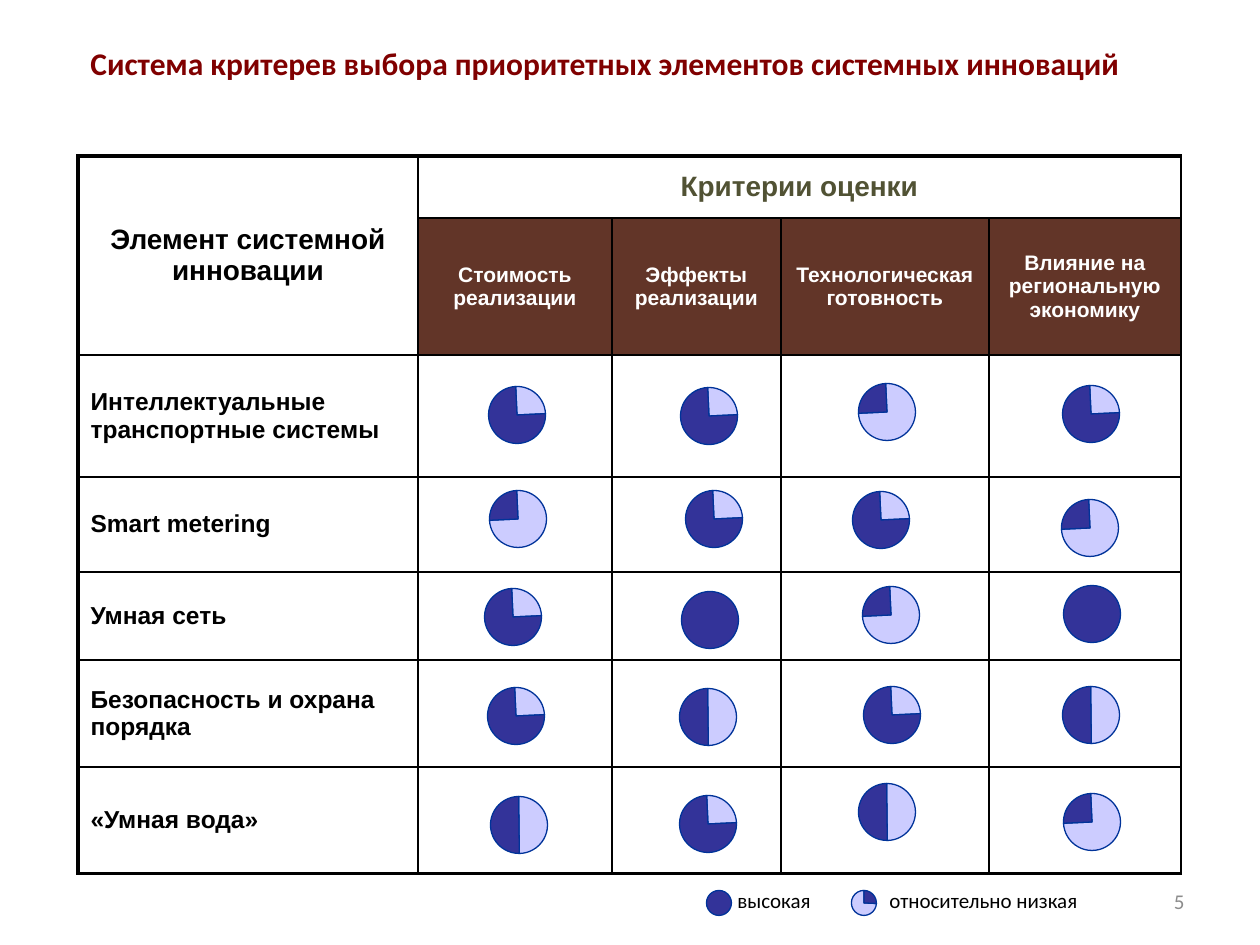
from lxml import etree
from pptx import Presentation
from pptx.dml.color import RGBColor
from pptx.enum.shapes import MSO_SHAPE as SHAPE
from pptx.enum.text import MSO_ANCHOR as ANCHOR, PP_ALIGN as ALIGN
from pptx.oxml.ns import qn
from pptx.util import Pt

EMU_PER_PX = 914400 / 126

BLACK = RGBColor(0x00, 0x00, 0x00)
WHITE = RGBColor(0xFF, 0xFF, 0xFF)
OLIVE = RGBColor(0x51, 0x52, 0x34)
BROWN = RGBColor(0x62, 0x35, 0x28)
MAROON = RGBColor(0x80, 0x00, 0x00)
GRAY = RGBColor(0x8C, 0x8C, 0x8C)
DARK = RGBColor(0x33, 0x33, 0x99)
LIGHT = RGBColor(0xCC, 0xCC, 0xFF)
OUTLINE = RGBColor(0x00, 0x33, 0x99)

# Dark part of each rating: start and end angle, clockwise from the right
FULL = None
HIGH = (357.4, 267.4)
HALF = (89.3, 269.3)
LOW = (177.4, 267.4)
LEGEND_LOW = (270, 2.6)


def px(length):
    return round(length * EMU_PER_PX)


def write(frame, text, size=12, color=BLACK, bold=False, font="Calibri",
          align=ALIGN.LEFT, before=0):
    paragraph = frame.paragraphs[0]
    paragraph.alignment = align
    paragraph.space_before = Pt(before)
    run = paragraph.add_run()
    run.text = text
    run.font.size, run.font.bold, run.font.name = Pt(size), bold, font
    run.font.color.rgb = color


class SlideBuilder:
    line_width = Pt(0.75)

    def __init__(self, slide):
        self.slide = slide

    def label(self, text, left, top, width, height, wrap=True,
              anchor=ANCHOR.TOP, **style):
        box = self.slide.shapes.add_textbox(px(left), px(top), px(width), px(height))
        box.text_frame.word_wrap = wrap
        box.text_frame.vertical_anchor = anchor
        write(box.text_frame, text, **style)

    def disc(self, center, size, color, angles=None):
        x, y = center
        kind = SHAPE.PIE if angles else SHAPE.OVAL
        part = self.slide.shapes.add_shape(
            kind, px(x - size / 2), px(y - size / 2), px(size), px(size))
        for index, angle in enumerate(angles or ()):
            # Adjustments are 60000ths of a degree divided by 100000
            part.adjustments[index] = angle * 0.6
        part.shadow.inherit = False
        part.fill.solid()
        part.fill.fore_color.rgb = color
        part.line.color.rgb = OUTLINE
        part.line.width = self.line_width

    def rating(self, center, dark, size=57):
        if dark:
            start, end = dark
            self.disc(center, size, LIGHT, (end, start))
        self.disc(center, size, DARK, dark)

    def table(self, left, top, columns, rows):
        table = self.slide.shapes.add_table(
            len(rows), len(columns), px(left), px(top),
            px(sum(columns)), px(sum(rows))).table
        table.first_row = table.horz_banding = False
        for column, width in zip(table.columns, columns):
            column.width = px(width)
        for row, height in zip(table.rows, rows):
            row.height = px(height)
        last = len(rows) - 1
        for r in range(len(rows)):
            for c in range(len(columns)):
                cell = table.cell(r, c)
                self.borders(cell, {"lnL": 2.25 if c == 0 else 1, "lnR": 1,
                                    "lnT": 2.25 if r == 0 else 1,
                                    "lnB": 2.25 if r == last else 1})
                cell.fill.background()
        return table

    def borders(self, cell, widths):
        properties = cell._tc.get_or_add_tcPr()
        for side, width in widths.items():
            line = etree.SubElement(properties, qn("a:" + side), w=str(Pt(width)))
            fill = etree.SubElement(line, qn("a:solidFill"))
            etree.SubElement(fill, qn("a:srgbClr"), val=str(BLACK))

    def cell(self, cell, text, size, fill=None, **style):
        cell.vertical_anchor = ANCHOR.MIDDLE
        if fill is not None:
            cell.fill.solid()
            cell.fill.fore_color.rgb = fill
        write(cell.text_frame, text, size=size, bold=True, font="Arial",
              before=size * 0.2, **style)


CRITERIA = ["Стоимость реализации", "Эффекты реализации",
            "Технологическая готовность", "Влияние на региональную экономику"]

# Each element with the centre and level of its four ratings
ELEMENTS = [
    ("Интеллектуальные транспортные системы",
     [((517, 415), HIGH), ((709, 416), HIGH), ((887, 412), LOW), ((1091, 414), HIGH)]),
    ("Smart metering",
     [((518, 519), LOW), ((714, 519), HIGH), ((881, 520), HIGH), ((1090, 528), LOW)]),
    ("Умная сеть",
     [((513, 617), HIGH), ((710, 620), FULL), ((891, 615), LOW), ((1092, 614), FULL)]),
    ("Безопасность и охрана порядка",
     [((516, 716), HIGH), ((708, 717), HALF), ((892, 715), HIGH), ((1091, 715), HALF)]),
    ("«Умная вода»",
     [((519, 825), HALF), ((708, 824), HIGH), ((887, 812), HALF), ((1092, 822), LOW)]),
]


def main():
    deck = Presentation()
    deck.slide_width, deck.slide_height = px(1260), px(945)
    builder = SlideBuilder(deck.slides.add_slide(deck.slide_layouts[6]))

    # Title
    builder.label("Система критерев выбора приоритетных элементов системных инноваций",
                  78, 38, 1065, 50, size=18, color=MAROON, bold=True)

    # Table headings
    grid = builder.table(78, 156, [340, 194, 169, 208, 192],
                         [62, 137, 122, 95, 88, 107, 107])
    grid.cell(0, 0).merge(grid.cell(1, 0))
    grid.cell(0, 1).merge(grid.cell(0, 4))
    builder.cell(grid.cell(0, 0), "Элемент системной инновации", 16, align=ALIGN.CENTER)
    builder.cell(grid.cell(0, 1), "Критерии оценки", 16, color=OLIVE, align=ALIGN.CENTER)
    for column, criterion in enumerate(CRITERIA, 1):
        builder.cell(grid.cell(1, column), criterion, 12, fill=BROWN, color=WHITE,
                     align=ALIGN.CENTER)

    # Elements and their ratings
    for row, (element, ratings) in enumerate(ELEMENTS, 2):
        builder.cell(grid.cell(row, 0), element, 14)
        for center, level in ratings:
            builder.rating(center, level)

    # Legend
    builder.rating((719, 903), FULL, size=25)
    builder.rating((864, 903), LEGEND_LOW, size=25)
    builder.label("высокая", 725, 881, 152, 38)
    builder.label("относительно низкая", 877, 881, 215, 38, wrap=False)

    # Slide number
    builder.label("5", 903, 876, 294, 50, anchor=ANCHOR.MIDDLE, color=GRAY,
                  align=ALIGN.RIGHT)

    deck.save("out.pptx")


if __name__ == "__main__":
    main()
